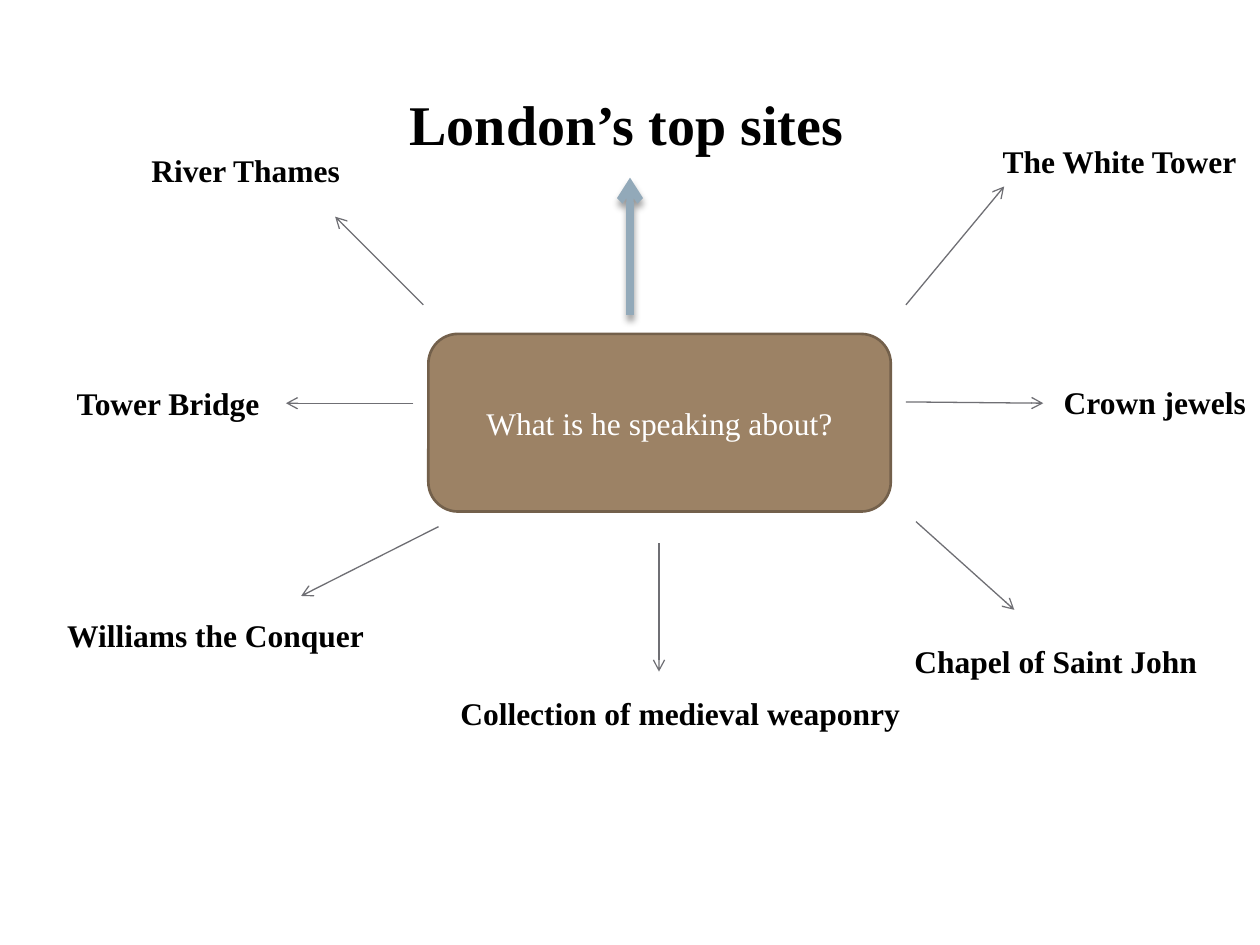
from dataclasses import dataclass

from lxml.etree import SubElement
from pptx import Presentation
from pptx.dml.color import RGBColor
from pptx.enum.shapes import MSO_CONNECTOR, MSO_SHAPE
from pptx.enum.text import MSO_ANCHOR, MSO_AUTO_SIZE, PP_ALIGN
from pptx.oxml.ns import qn
from pptx.slide import Slide
from pptx.text.text import TextFrame
from pptx.util import Inches, Pt

FONT = "Times New Roman"
COLORS = {
    "box": "9C8265",
    "box_line": "73604B",
    "arrow": "6F6F74",
    "title_arrow": "92A9B9",
    "text": "000000",
    "box_text": "FFFFFF",
}


@dataclass
class Label:
    text: str
    left: float
    top: float
    width: float
    align: PP_ALIGN = PP_ALIGN.CENTER
    wrap: bool = False


@dataclass
class Arrow:
    start: tuple[float, float]
    end: tuple[float, float]
    color: str = "arrow"
    weight: float = 0.75
    shadow: bool = False


LABELS = [
    Label("River Thames", 1, 1.15, 1.9, wrap=True),
    Label("Tower Bridge", 0.51, 3, 1.72, PP_ALIGN.LEFT),
    Label("Williams the Conquer ", 0.41, 4.84, 2.6),
    Label("The White Tower", 7.86, 1.08, 2.13, PP_ALIGN.LEFT),
    Label("Chapel of Saint John ", 7.13, 5.05, 2.5),
    Label("Collection of medieval weaponry", 3.53, 5.46, 3.74),
    Label("Crown jewels ", 8.32, 2.99, 1.69),
]

ARROWS = [
    Arrow((3.36, 2.42), (2.66, 1.72)),
    Arrow((3.28, 3.2), (2.27, 3.2)),
    Arrow((3.48, 4.18), (2.39, 4.73)),
    Arrow((5, 2.5), (5, 1.41), "title_arrow", 4.25, True),
    Arrow((7.19, 2.42), (7.97, 1.48)),
    Arrow((7.19, 3.19), (8.28, 3.2)),
    Arrow((7.27, 4.14), (8.05, 4.84)),
    Arrow((5.23, 4.31), (5.23, 5.33)),
]


def rgb(name: str) -> RGBColor:
    return RGBColor.from_string(COLORS[name])


def write_text(text_frame: TextFrame, text: str, size: float, color: str,
               bold: bool, align: PP_ALIGN) -> None:
    text_frame.text = text
    paragraph = text_frame.paragraphs[0]
    paragraph.alignment = align
    font = paragraph.runs[0].font
    font.name = FONT
    font.size = Pt(size)
    font.bold = bold
    font.color.rgb = rgb(color)


def add_title(slide: Slide) -> None:
    title = slide.shapes.title
    title.left, title.top = Inches(3.13), Inches(0.66)
    title.width, title.height = Inches(3.8), Inches(0.64)
    text_frame = title.text_frame
    write_text(text_frame, "London’s top sites ", 32, "text", True, PP_ALIGN.CENTER)
    text_frame.word_wrap = False
    text_frame.auto_size = MSO_AUTO_SIZE.SHAPE_TO_FIT_TEXT
    text_frame.vertical_anchor = MSO_ANCHOR.TOP


def add_question(slide: Slide) -> None:
    box = slide.shapes.add_shape(
        MSO_SHAPE.FLOWCHART_ALTERNATE_PROCESS,
        Inches(3.4), Inches(2.65), Inches(3.67), Inches(1.41))
    box.shadow.inherit = False
    box.fill.solid()
    box.fill.fore_color.rgb = rgb("box")
    box.line.color.rgb = rgb("box_line")
    box.line.width = Pt(1.5)
    box.text_frame.vertical_anchor = MSO_ANCHOR.MIDDLE
    write_text(box.text_frame, "What is he speaking about?", 18, "box_text",
               False, PP_ALIGN.CENTER)


def add_arrow(slide: Slide, arrow: Arrow) -> None:
    points = [Inches(value) for value in arrow.start + arrow.end]
    connector = slide.shapes.add_connector(MSO_CONNECTOR.STRAIGHT, *points)
    connector.line.color.rgb = rgb(arrow.color)
    connector.line.width = Pt(arrow.weight)
    SubElement(connector.line._get_or_add_ln(), qn("a:tailEnd"), type="arrow")
    effects = SubElement(connector._element.spPr, qn("a:effectLst"))
    if arrow.shadow:
        shadow = SubElement(effects, qn("a:outerShdw"), blurRad=str(Pt(4)),
                            dist=str(Pt(3.3)), dir="5400000", rotWithShape="0")
        color = SubElement(shadow, qn("a:srgbClr"), val=COLORS["text"])
        SubElement(color, qn("a:alpha"), val="40000")


def add_label(slide: Slide, label: Label) -> None:
    box = slide.shapes.add_textbox(Inches(label.left), Inches(label.top),
                                   Inches(label.width), Inches(0.4))
    box.text_frame.word_wrap = label.wrap
    box.text_frame.auto_size = MSO_AUTO_SIZE.SHAPE_TO_FIT_TEXT
    write_text(box.text_frame, label.text, 18, "text", True, label.align)


def main() -> None:
    presentation = Presentation()
    presentation.slide_width = Inches(10)
    presentation.slide_height = Inches(7.5)
    slide = presentation.slides.add_slide(
        presentation.slide_layouts.get_by_name("Title Only"))
    add_title(slide)
    add_question(slide)
    for arrow in ARROWS:
        add_arrow(slide, arrow)
    for label in LABELS:
        add_label(slide, label)
    presentation.save("out.pptx")


if __name__ == "__main__":
    main()
